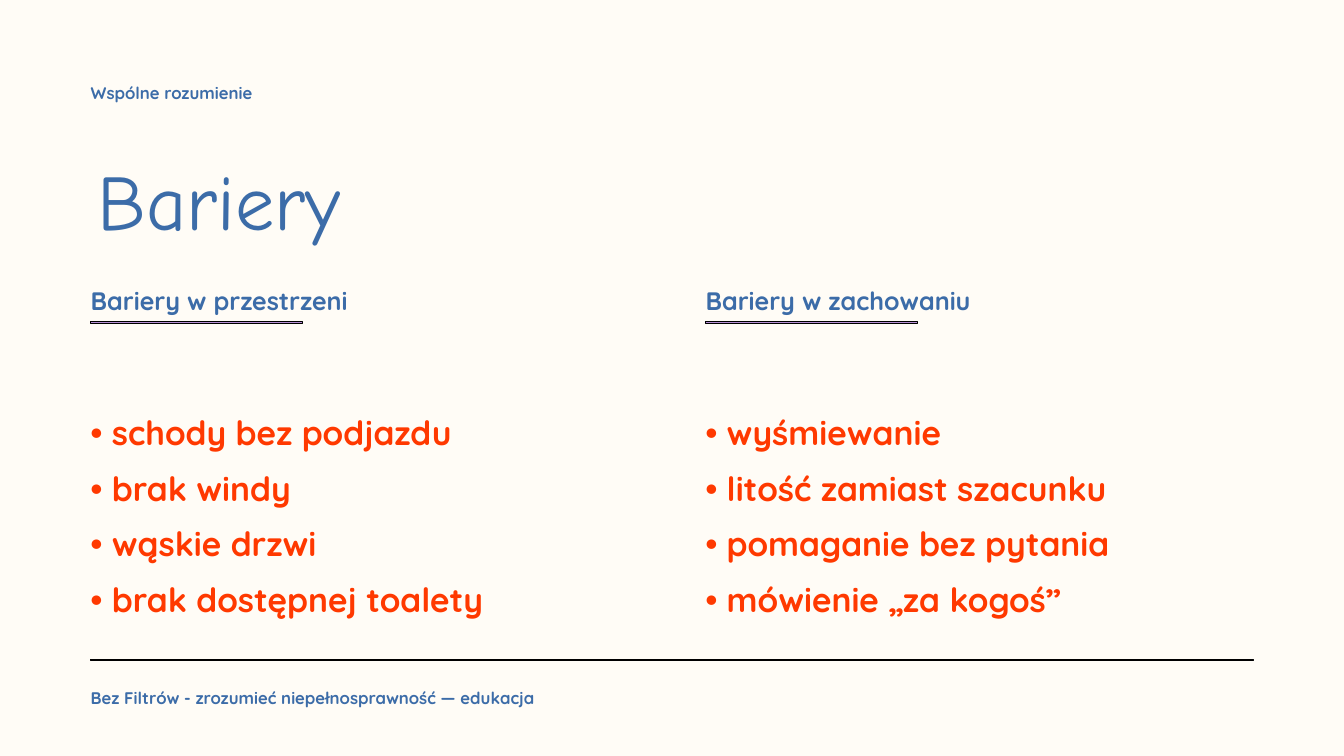
import dataclasses

import pptx
import pptx.dml.color
import pptx.enum.shapes
import pptx.enum.text
import pptx.util

# Grid of 400 columns by 225 rows, each cell 0.05 inch
CELL = 0.05
COLS, ROWS = 400, 225
EDGE = 27
FULL = COLS - 2 * EDGE
STEP = 183
WIDE = 170

PAPER, BLUE, RED = "FFFCF6", "3C6CA8", "FF3900"
LILAC, BLACK = "B78FD6", "000000"


@dataclasses.dataclass(frozen=True)
class Box:
    col: float
    row: float
    wide: float
    high: float


@dataclasses.dataclass(frozen=True)
class Style:
    size: int
    color: str = BLUE
    font: str = "Quicksand"
    bold: bool = True
    space: float = 1.2


@dataclasses.dataclass(frozen=True)
class Group:
    head: str
    items: tuple[str, ...]


SMALL = Style(18)
TITLE = Style(84, font="Comic Neue", bold=False)
HEAD = Style(27)
LIST = Style(36, RED, space=1.38)

GROUPS = (
    Group("Bariery w przestrzeni",
          ("schody bez podjazdu", "brak windy", "wąskie drzwi",
           "brak dostępnej toalety")),
    Group("Bariery w zachowaniu",
          ("wyśmiewanie", "litość zamiast szacunku",
           "pomaganie bez pytania", "mówienie „za kogoś”")),
)


def paint(value: str) -> pptx.dml.color.RGBColor:
    return pptx.dml.color.RGBColor.from_string(value)


def place(box: Box) -> list[int]:
    """Turn grid cells into left, top, width and height."""
    return [pptx.util.Inches(n * CELL)
            for n in (box.col, box.row, box.wide, box.high)]


def write(slide, box: Box, lines: tuple[str, ...], style: Style,
          anchor=pptx.enum.text.MSO_ANCHOR.MIDDLE):
    frame = slide.shapes.add_textbox(*place(box)).text_frame
    frame.word_wrap = True
    frame.vertical_anchor = anchor
    frame.margin_left = frame.margin_right = 0
    frame.margin_top = frame.margin_bottom = 0
    frame.text = "\n".join(lines)
    for para in frame.paragraphs:
        para.line_spacing = style.space
        para.font.name = style.font
        para.font.size = pptx.util.Pt(style.size)
        para.font.bold = style.bold
        para.font.color.rgb = paint(style.color)
    return frame


def rule(slide, box: Box) -> None:
    """Draw a thin filled bar with a black outline."""
    bar = slide.shapes.add_shape(
        pptx.enum.shapes.MSO_SHAPE.RECTANGLE, *place(box))
    bar.shadow.inherit = False
    bar.fill.solid()
    bar.fill.fore_color.rgb = paint(LILAC)
    bar.line.color.rgb = paint(BLACK)
    bar.line.width = pptx.util.Pt(1)


def column(slide, left: float, group: Group) -> None:
    write(slide, Box(left, 79.4, WIDE, 18.2), (group.head,), HEAD)
    rule(slide, Box(left, 95.6, 63, 0.8))
    items = tuple(f"• {item}" for item in group.items)
    write(slide, Box(left, 99.8, WIDE, 102.8), items, LIST)


def main() -> None:
    deck = pptx.Presentation()
    deck.slide_width = pptx.util.Inches(COLS * CELL)
    deck.slide_height = pptx.util.Inches(ROWS * CELL)
    slide = deck.slides.add_slide(deck.slide_layouts[6])
    slide.background.fill.solid()
    slide.background.fill.fore_color.rgb = paint(PAPER)

    write(slide, Box(EDGE, 21, FULL, 12), ("Wspólne rozumienie",), SMALL)
    title = write(slide, Box(EDGE + 2, 39.6, FULL - 4, 27.8), ("Bariery",),
                  TITLE, pptx.enum.text.MSO_ANCHOR.TOP)
    title.auto_size = pptx.enum.text.MSO_AUTO_SIZE.SHAPE_TO_FIT_TEXT

    for index, group in enumerate(GROUPS):
        column(slide, EDGE + index * STEP, group)

    rule(slide, Box(EDGE, 196.2, FULL, 0.5))
    write(slide, Box(EDGE, 201, FULL, 12),
          ("Bez Filtrów - zrozumieć niepełnosprawność — edukacja",), SMALL)
    deck.save("out.pptx")


if __name__ == "__main__":
    main()
